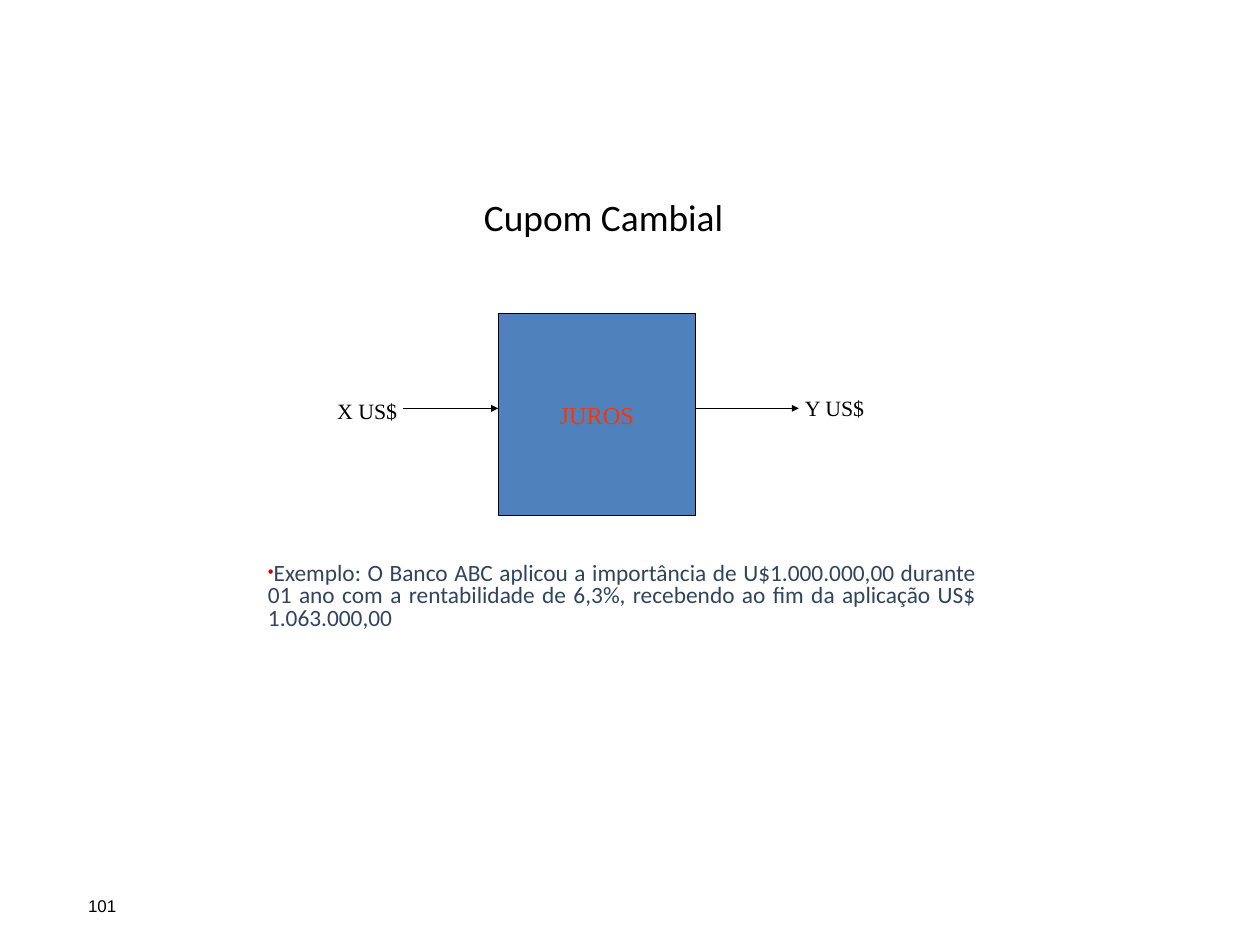
from dataclasses import dataclass

from lxml import etree
from pptx import Presentation
from pptx import util as u
from pptx.dml.color import RGBColor
from pptx.enum import shapes, text
from pptx.oxml import ns

BLACK = RGBColor(0x00, 0x00, 0x00)
BLUE = RGBColor(0x4F, 0x81, 0xBD)
ORANGE = RGBColor(0xFF, 0x33, 0x00)
SLATE = RGBColor(0x30, 0x43, 0x5F)
BULLET_RED = "CC0000"
SERIF = "Times New Roman"
ARROW_Y = 350
LINE_WIDTH = 0.75


@dataclass(frozen=True)
class Box:
    left: float
    top: float
    width: float
    height: float


@dataclass(frozen=True)
class Label:
    words: str
    box: Box
    size: float
    font: str
    alignment: text.PP_ALIGN
    wrap: bool


@dataclass(frozen=True)
class Arrow:
    start: float
    end: float


TITLE_BOX = Box(307.5, 162.7, 420, 56)
BODY_BOX = Box(222.5, 479.5, 621.4, 104.4)
INTEREST_BOX = Box(427, 268.5, 169, 173.6)

ARROWS = [
    Arrow(345.6, INTEREST_BOX.left),
    Arrow(INTEREST_BOX.left + INTEREST_BOX.width, 684.7),
]
LABELS = [
    Label("X US$", Box(281.5, 337, 66.2, 30.2), 18.7, SERIF, text.PP_ALIGN.CENTER, False),
    Label("Y US$", Box(682.5, 334.8, 65.5, 30.2), 18.7, SERIF, text.PP_ALIGN.CENTER, False),
    Label("101", Box(68.4, 764, 59.8, 25.2), 14.5, "Arial", text.PP_ALIGN.LEFT, True),
]


def place(shape, box: Box) -> None:
    shape.left, shape.top = u.Pt(box.left), u.Pt(box.top)
    shape.width, shape.height = u.Pt(box.width), u.Pt(box.height)


def write(shape, words: str, size: float, font: str, color: RGBColor,
          alignment: text.PP_ALIGN, anchor=text.MSO_ANCHOR.TOP, wrap: bool = True):
    """Fill a shape with one formatted paragraph and return the paragraph."""
    frame = shape.text_frame
    frame.text = words
    frame.word_wrap = wrap
    frame.auto_size = text.MSO_AUTO_SIZE.NONE
    frame.vertical_anchor = anchor
    paragraph = frame.paragraphs[0]
    paragraph.alignment = alignment
    run_font = paragraph.runs[0].font
    run_font.size = u.Pt(size)
    run_font.name = font
    run_font.color.rgb = color
    return paragraph


def draw_label(slide, label: Label) -> None:
    shape = slide.shapes.add_textbox(0, 0, 0, 0)
    place(shape, label.box)
    write(shape, label.words, label.size, label.font, BLACK,
          label.alignment, wrap=label.wrap)


def draw_arrow(slide, arrow: Arrow) -> None:
    connector = slide.shapes.add_connector(
        shapes.MSO_CONNECTOR.STRAIGHT,
        u.Pt(arrow.start), u.Pt(ARROW_Y), u.Pt(arrow.end), u.Pt(ARROW_Y))
    connector.line.color.rgb = BLACK
    connector.line.width = u.Pt(LINE_WIDTH)
    line = connector.line._get_or_add_ln()
    etree.SubElement(line, ns.qn("a:tailEnd"), type="triangle")
    etree.SubElement(connector._element.spPr, ns.qn("a:effectLst"))


def draw_interest_box(slide) -> None:
    shape = slide.shapes.add_shape(shapes.MSO_SHAPE.RECTANGLE, 0, 0, 0, 0)
    place(shape, INTEREST_BOX)
    shape.shadow.inherit = False
    shape.fill.solid()
    shape.fill.fore_color.rgb = BLUE
    shape.line.color.rgb = BLACK
    shape.line.width = u.Pt(LINE_WIDTH)
    write(shape, "JUROS", 20.8, SERIF, ORANGE, text.PP_ALIGN.CENTER,
          text.MSO_ANCHOR.MIDDLE, wrap=False)


def add_bullet(paragraph) -> None:
    properties = paragraph._p.get_or_add_pPr()
    properties.set("marL", "0")
    properties.set("indent", str(-u.Pt(30)))
    color = etree.SubElement(properties, ns.qn("a:buClr"))
    etree.SubElement(color, ns.qn("a:srgbClr"), val=BULLET_RED)
    etree.SubElement(properties, ns.qn("a:buSzPct"), val="70000")
    etree.SubElement(properties, ns.qn("a:buChar"), char="•")


def main() -> None:
    presentation = Presentation()
    presentation.slide_width, presentation.slide_height = u.Pt(1080), u.Pt(810)
    slide = presentation.slides.add_slide(presentation.slide_layouts[1])

    # Title
    title = slide.shapes.title
    place(title, TITLE_BOX)
    write(title, "Cupom Cambial", 32, "Calibri", BLACK, text.PP_ALIGN.CENTER)

    # Worked example
    body = slide.placeholders[1]
    place(body, BODY_BOX)
    example = write(
        body,
        "Exemplo: O Banco ABC aplicou a importância de U$1.000.000,00 durante "
        "01 ano com a rentabilidade de 6,3%, recebendo ao fim da aplicação "
        "US$ 1.063.000,00",
        20, "Calibri", SLATE, text.PP_ALIGN.JUSTIFY)
    example.level = 1
    example.line_spacing = 0.8
    example.space_before = u.Pt(0)
    add_bullet(example)

    # Flow diagram and slide number
    draw_interest_box(slide)
    for arrow in ARROWS:
        draw_arrow(slide, arrow)
    for label in LABELS:
        draw_label(slide, label)

    presentation.save("out.pptx")


if __name__ == "__main__":
    main()
